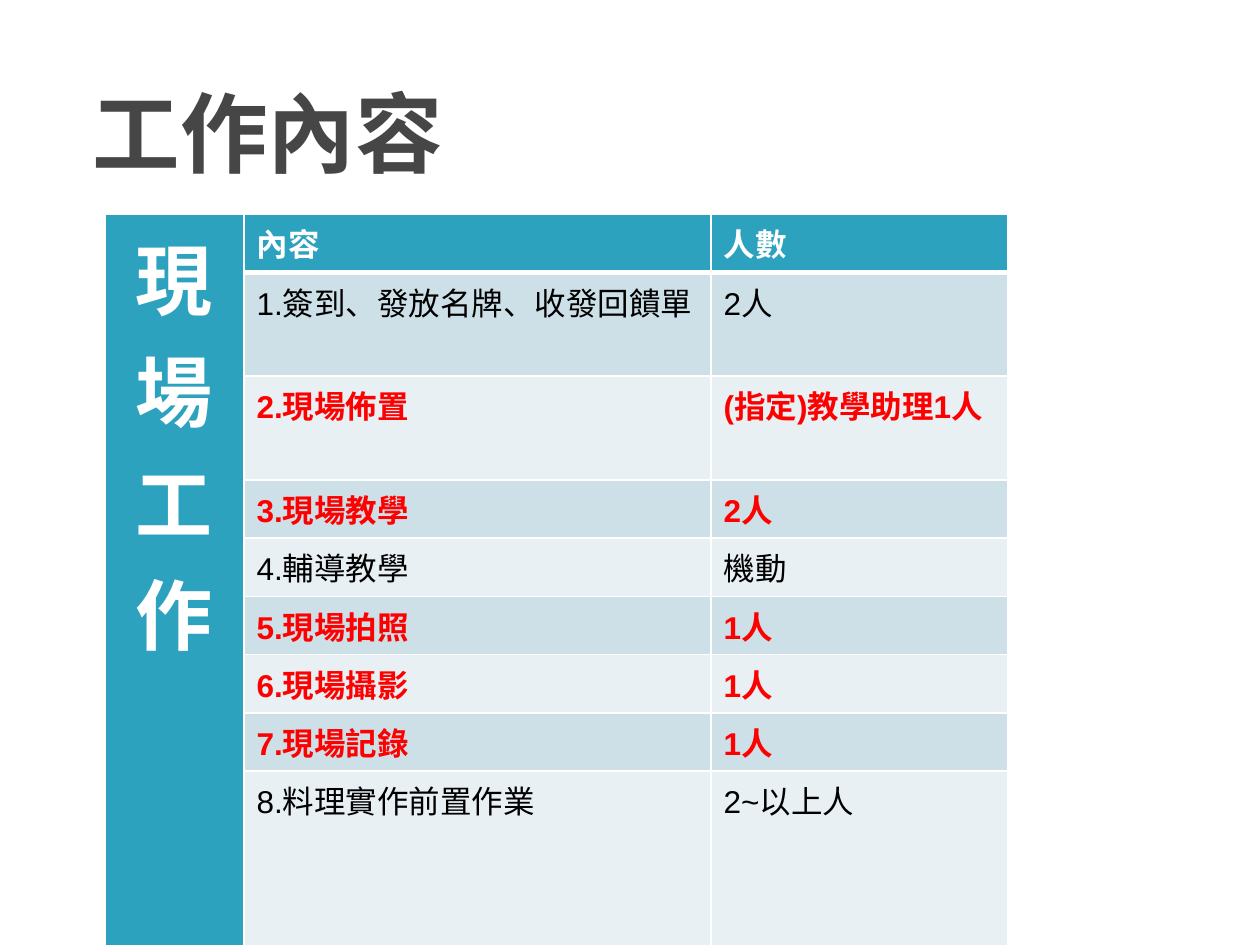
from lxml.etree import SubElement
from pptx import Presentation
from pptx.dml.color import RGBColor
from pptx.enum.text import MSO_ANCHOR, MSO_AUTO_SIZE, PP_ALIGN
from pptx.oxml.ns import qn
from pptx.util import Emu, Pt

EMU_PER_PX = 914400 / 126
WHITE, BLACK, RED, GREY = "FFFFFF", "000000", "FF0000", "464646"
TEAL, BANDS = "2DA2BF", ("CDE0E8", "E8F0F4")
COLUMN_WIDTHS = (139, 467, 297)
ROW_HEIGHT = 51
HEADINGS = ("內容", "人數")
TASKS = (
    ("1.簽到、發放名牌、收發回饋單", "2人", False),
    ("2.現場佈置", "(指定)教學助理1人", True),
    ("3.現場教學", "2人", True),
    ("4.輔導教學", "機動", False),
    ("5.現場拍照", "1人", True),
    ("6.現場攝影", "1人", True),
    ("7.現場記錄", "1人", True),
    ("8.料理實作前置作業", "2~以上人", False),
)


def px(length):
    return Emu(round(length * EMU_PER_PX))


def rgb(color):
    return RGBColor.from_string(color)


def add_run(paragraph, text, font, size, color, bold):
    run = paragraph.add_run()
    run.text = text
    run.font.name = font
    run.font.size = Pt(size)
    run.font.color.rgb = rgb(color)
    run.font.bold = bold


def style_cell(cell, fill, bottom_width=1):
    properties = cell._tc.get_or_add_tcPr()
    for side, width in (("L", 1), ("R", 1), ("T", 1), ("B", bottom_width)):
        border = SubElement(properties, qn(f"a:ln{side}"), w=str(Pt(width)))
        paint = SubElement(border, qn("a:solidFill"))
        SubElement(paint, qn("a:srgbClr"), val=WHITE)
    cell.fill.solid()
    cell.fill.fore_color.rgb = rgb(fill)


def place_title(slide, left, top, width, height):
    title = slide.shapes.title
    title.left, title.top, title.width, title.height = map(px, (left, top, width, height))
    frame = title.text_frame
    frame.auto_size = MSO_AUTO_SIZE.NONE
    frame.vertical_anchor = MSO_ANCHOR.BOTTOM
    frame.margin_left = frame.margin_right = frame.margin_bottom = 0
    frame.margin_top = px(6)
    heading = frame.paragraphs[0]
    heading.alignment = PP_ALIGN.CENTER
    add_run(heading, "工作內容", "Calibri", 50, GREY, True)


def place_duties(slide, left, top):
    row_count = len(TASKS) + 1
    duties = slide.shapes.add_table(
        row_count, len(COLUMN_WIDTHS), px(left), px(top),
        px(sum(COLUMN_WIDTHS)), px(ROW_HEIGHT * row_count),
    ).table
    for column, width in zip(duties.columns, COLUMN_WIDTHS):
        column.width = px(width)
    for row in duties.rows:
        row.height = px(ROW_HEIGHT)

    for index in range(row_count):
        style_cell(duties.cell(index, 0), TEAL, 3)
    stage = duties.cell(0, 0)
    stage.merge(duties.cell(row_count - 1, 0))
    for index, character in enumerate("現場工作"):
        frame = stage.text_frame
        line = frame.add_paragraph() if index else frame.paragraphs[0]
        line.alignment = PP_ALIGN.CENTER
        add_run(line, character, "Arial", 44, WHITE, True)

    for column, heading in enumerate(HEADINGS, 1):
        cell = duties.cell(0, column)
        style_cell(cell, TEAL, 3)
        add_run(cell.text_frame.paragraphs[0], heading, "Arial", 18, WHITE, True)

    for row, (task, people, highlighted) in enumerate(TASKS, 1):
        color = RED if highlighted else BLACK
        for column, text in enumerate((task, people), 1):
            cell = duties.cell(row, column)
            style_cell(cell, BANDS[(row - 1) % 2])
            add_run(cell.text_frame.paragraphs[0], text, "Arial", 18, color, highlighted)


def main():
    presentation = Presentation()
    presentation.slide_width, presentation.slide_height = px(1260), px(945)
    slide = presentation.slides.add_slide(presentation.slide_layouts[5])
    place_title(slide, 54, 26, 428, 158)
    place_duties(slide, 105, 214)
    presentation.save("out.pptx")


if __name__ == "__main__":
    main()
